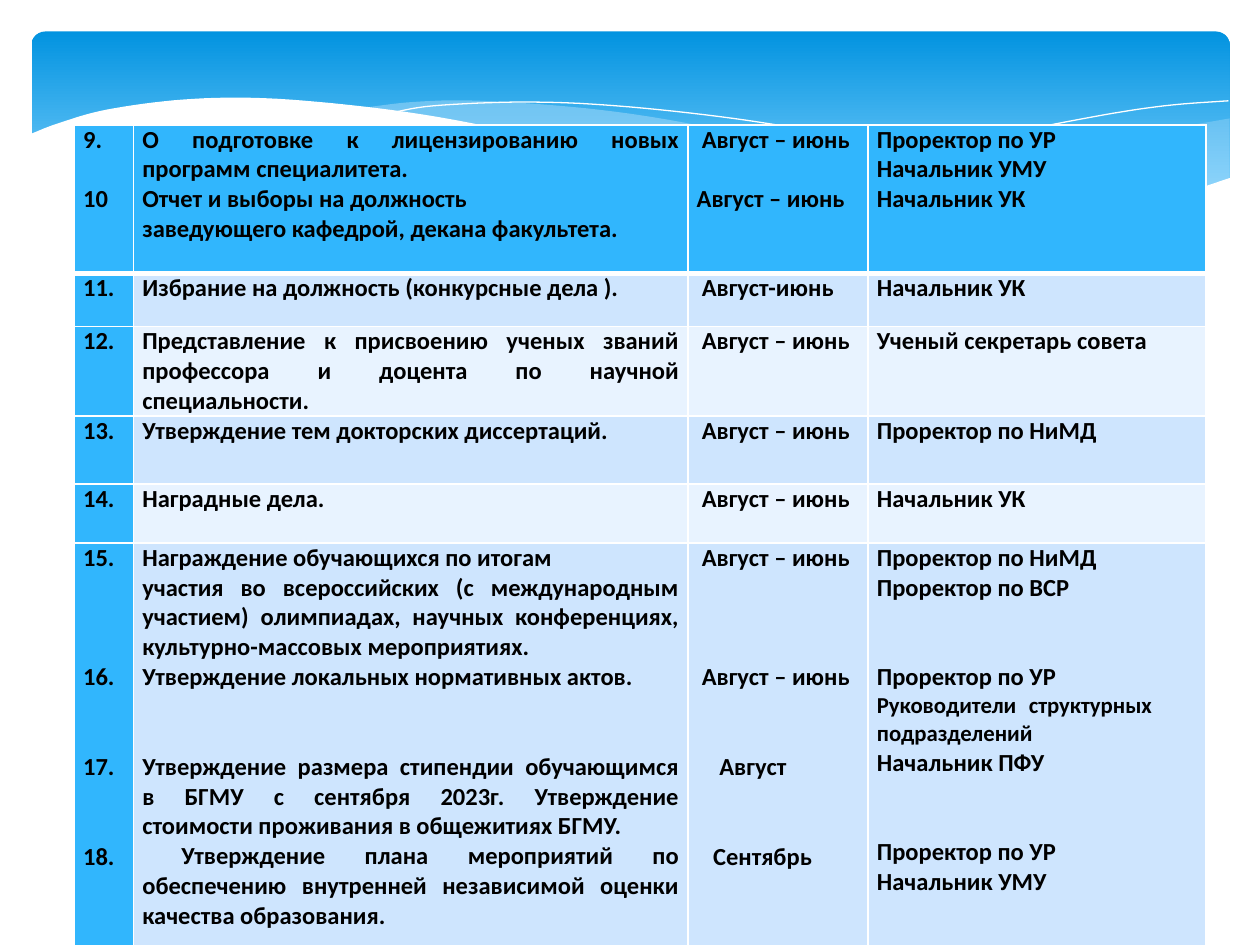
from lxml import etree
from pptx import Presentation
from pptx.dml.color import RGBColor
from pptx.enum import shapes, text
from pptx.oxml import ns
from pptx.util import Inches, Pt

FONT = "Calibri"
LINE_HEIGHT = 17.1  # points, one line of 14 pt text
WHITE, ACCENT, BANDS, WAVE = "FFFFFF", "31B6FD", ("E8F3FF", "CEE5FE"), "C6E7FC"


def color(value):
    return RGBColor.from_string(value)


def item(words, gap=0, first=0, right=0, size=14):
    """Paragraph preceded by `gap` free lines; first-line and right indents in inches."""
    return dict(words=words, gap=gap, first=first, right=right, size=size)


TERM = item("Август – июнь", first=0.04)
COLUMN_WIDTHS = [0.47, 4.4, 1.43, 2.68]
COLUMN_ALIGN = [text.PP_ALIGN.LEFT, text.PP_ALIGN.JUSTIFY] * 2
ROW_HEIGHTS = [1.18, 0.42, 0.71, 0.54, 0.47, 3.26]
PLAN = [
    [[item("9."), item("10", gap=1)],
     [item("О подготовке к лицензированию новых программ специалитета."),
      item("Отчет и выборы на должность"),
      item("заведующего кафедрой, декана факультета.")],
     [TERM, item("Август – июнь", gap=1)],
     [item("Проректор по УР"), item("Начальник УМУ"), item("Начальник УК")]],
    [[item("11.")],
     [item("Избрание на должность (конкурсные дела ).")],
     [item("Август-июнь", first=0.04)],
     [item("Начальник УК")]],
    [[item("12.")],
     [item("Представление к присвоению ученых званий профессора и доцента "
           "по научной специальности.")],
     [TERM],
     [item("Ученый секретарь совета")]],
    [[item("13.")],
     [item("Утверждение тем докторских диссертаций.")],
     [TERM],
     [item("Проректор по НиМД")]],
    [[item("14.")],
     [item("Наградные дела.")],
     [TERM],
     [item("Начальник УК")]],
    [[item("15."), item("16.", gap=3), item("17.", gap=2), item("18.", gap=2)],
     [item("Награждение обучающихся по итогам"),
      item("участия во всероссийских (с международным участием) олимпиадах, "
           "научных конференциях, культурно-массовых мероприятиях."),
      item("Утверждение локальных нормативных актов."),
      item("Утверждение размера стипендии обучающимся в БГМУ с сентября 2023г. "
           "Утверждение\vстоимости проживания в общежитиях БГМУ.", gap=2),
      item("Утверждение плана мероприятий по обеспечению внутренней "
           "независимой оценки качества образования.", first=0.31)],
     [TERM, {**TERM, "gap": 3}, item("Август", gap=2, first=0.18),
      item("Сентябрь", gap=2, first=0.13)],
     [item("Проректор по НиМД"), item("Проректор по ВСР"),
      item("Проректор по УР", gap=2),
      item("Руководители структурных подразделений", right=0.36, size=13),
      item("Начальник ПФУ"),
      item("Проректор по УР", gap=2), item("Начальник УМУ")]],
]


def curve(*knots, steps=8):
    """Points of a Catmull-Rom curve through the knots."""
    padded = [knots[0], *knots, knots[-1]]
    points = [knots[0]]
    for a, b, c, d in zip(padded, padded[1:], padded[2:], padded[3:]):
        for step in range(1, steps + 1):
            t = step / steps
            points.append(tuple(
                (2 * q + (r - p) * t + (2 * p - 5 * q + 4 * r - s) * t ** 2
                 + (3 * q - p - 3 * r + s) * t ** 3) / 2
                for p, q, r, s in zip(a, b, c, d)))
    return points


def add_outline(slide, left, top, points, fill=None, alpha=None, line=None):
    spots = [(Inches(left + x), Inches(top + y)) for x, y in points]
    builder = slide.shapes.build_freeform(*spots[0])
    builder.add_line_segments(spots[1:], close=fill is not None)
    outline = builder.convert_to_shape()
    outline.shadow.inherit = False
    if fill:
        outline.fill.solid()
        outline.fill.fore_color.rgb = color(fill)
        if alpha:
            tint = outline.fill._xPr.find(".//" + ns.qn("a:srgbClr"))
            etree.SubElement(tint, ns.qn("a:alpha"), val=str(alpha * 1000))
    else:
        outline.fill.background()
    if line:
        outline.line.color.rgb = color(line)
        outline.line.width = Pt(0)
    else:
        outline.line.fill.background()


def add_banner(slide, left, top, width, height):
    """Blue gradient band whose lower edge is cut by waves."""
    band = slide.shapes.add_shape(
        shapes.MSO_SHAPE.ROUNDED_RECTANGLE,
        Inches(left), Inches(top), Inches(width), Inches(height))
    band.adjustments[0] = 0.07
    band.shadow.inherit = False
    band.line.fill.background()
    band.fill.gradient()
    band.fill.gradient_angle = 270
    for stop, (position, shade) in zip(band.fill.gradient_stops,
                                       [(0, "0293E0"), (0.9, "83D3FE")]):
        stop.position = position
        stop.color.rgb = color(shade)

    right_wave = (
        curve((width, 0.69), (8.96, 0.79), (8.36, 0.93), (7.54, 1.12), (6.36, 1.35))
        + curve((6.36, 1.35), (7.07, 1.42), (7.78, 1.47), (8.29, 1.45),
                (8.8, 1.38), (9.24, 1.27), (width, 1.16)))
    middle_wave = (
        curve((8.68, 1.42), (7.82, 1.29), (6.81, 1.09), (6.04, 0.91), (5.16, 0.72),
              (4.4, 0.61), (3.55, 0.55), (3.03, 0.56), (2.61, 0.61))
        + curve((2.61, 0.61), (3.37, 0.72), (4.24, 0.91), (5.41, 1.18), (6.25, 1.33),
                (6.97, 1.43), (7.6, 1.47), (8.13, 1.47), (8.68, 1.42)))
    long_crest = curve((2.84, 0.65), (3.19, 0.59), (3.91, 0.56), (4.64, 0.59),
                       (5.57, 0.69), (6.4, 0.83), (7.35, 1.03), (8.82, 1.41))
    right_crest = curve((5.88, 1.26), (6.7, 1.05), (7.51, 0.86), (8.41, 0.68),
                        (8.99, 0.59), (9.5, 0.55))
    cover = (
        curve((9.52, 1.16), (8.95, 1.34), (8.38, 1.44), (7.68, 1.46), (6.83, 1.4),
              (6.01, 1.28), (5.04, 1.08), (4.22, 0.89), (3.4, 0.71), (2.67, 0.6),
              (1.86, 0.53), (1.21, 0.54), (0.6, 0.62), (0.21, 0.73), (-0.02, 0.82))
        + [(-0.02, 1.99), (9.52, 1.99)])

    for points, style in [
        (right_wave, dict(fill=WAVE, alpha=29)),
        (middle_wave, dict(fill=WAVE, alpha=40)),
        (long_crest, dict(line=WHITE)),
        (right_crest, dict(line=WHITE)),
        (cover, dict(fill=WHITE)),
    ]:
        add_outline(slide, left, top, points, **style)


def set_borders(cell, bottom):
    """White cell borders; must be set before the cell's fill."""
    properties = cell._tc.get_or_add_tcPr()
    for side, points in dict(L=1, R=1, T=1, B=bottom).items():
        border = etree.SubElement(properties, ns.qn(f"a:ln{side}"), w=str(Pt(points)))
        solid = etree.SubElement(border, ns.qn("a:solidFill"))
        etree.SubElement(solid, ns.qn("a:srgbClr"), val=WHITE)


def write_items(frame, items, align):
    for index, entry in enumerate(items):
        paragraph = frame.add_paragraph() if index else frame.paragraphs[0]
        paragraph.text = entry["words"]
        paragraph.alignment = align
        paragraph.space_before = Pt(round(entry["gap"] * LINE_HEIGHT, 1))
        indents = paragraph._p.get_or_add_pPr()
        for name, key in dict(indent="first", marR="right").items():
            indents.set(name, str(Inches(entry[key])))
        for name, value in dict(name=FONT, size=Pt(entry["size"]), bold=True).items():
            setattr(paragraph.font, name, value)
            for run in paragraph.runs:
                setattr(run.font, name, value)
        for run in paragraph.runs:
            run.font.color.rgb = color("000000")


def add_plan(slide, left, top):
    plan = slide.shapes.add_table(
        len(PLAN), len(COLUMN_WIDTHS), Inches(left), Inches(top),
        Inches(sum(COLUMN_WIDTHS)), Inches(sum(ROW_HEIGHTS))).table
    for column, width in zip(plan.columns, COLUMN_WIDTHS):
        column.width = Inches(width)
    for r, (row, height) in enumerate(zip(PLAN, ROW_HEIGHTS)):
        plan.rows[r].height = Inches(height)
        for c, items in enumerate(row):
            cell = plan.cell(r, c)
            cell.margin_left = cell.margin_right = Inches(0.07)
            cell.margin_top = cell.margin_bottom = 0
            set_borders(cell, bottom=1 if r else 3)
            cell.fill.solid()
            cell.fill.fore_color.rgb = color(ACCENT if r == 0 or c == 0 else BANDS[r % 2])
            write_items(cell.text_frame, items, COLUMN_ALIGN[c])


def main():
    deck = Presentation()
    deck.slide_width, deck.slide_height = Inches(10), Inches(7.5)
    slide = deck.slides.add_slide(deck.slide_layouts[6])
    add_banner(slide, 0.25, 0.25, 9.51, 1.56)
    add_plan(slide, 0.59, 0.99)
    deck.save("out.pptx")


if __name__ == "__main__":
    main()
